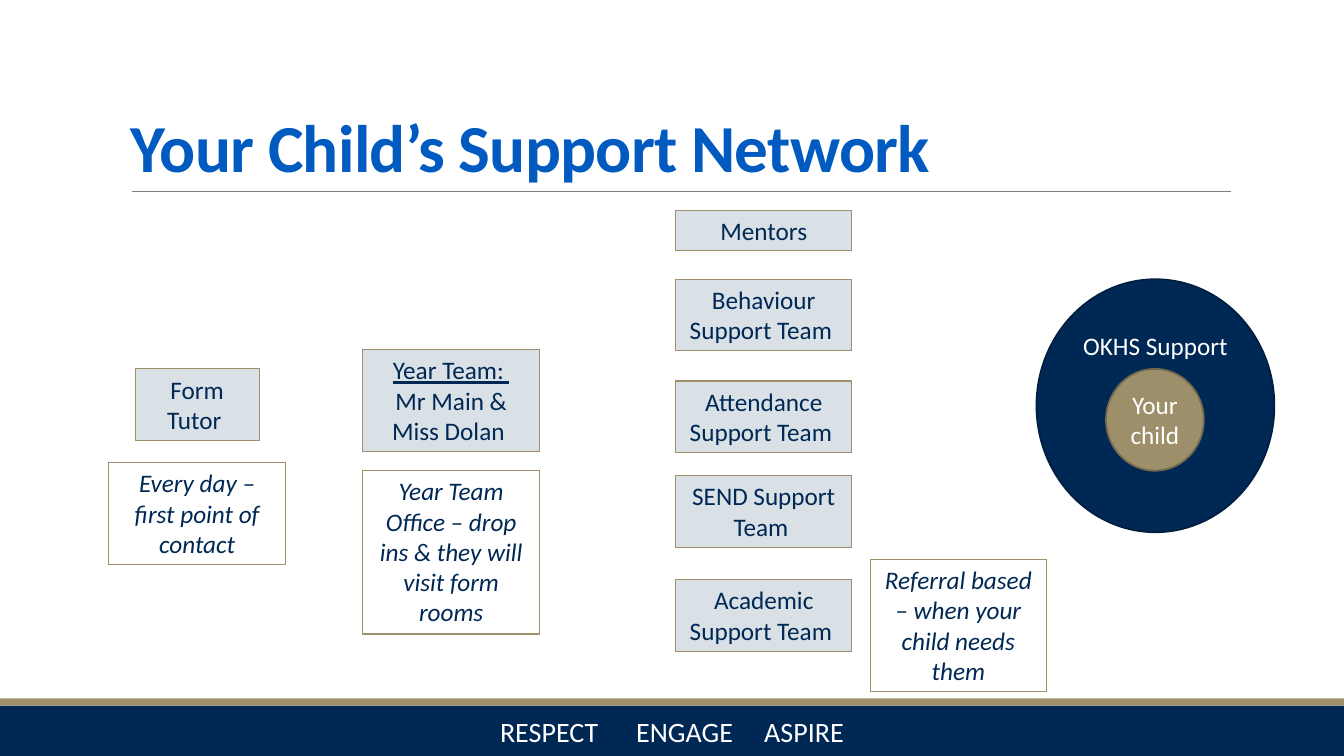
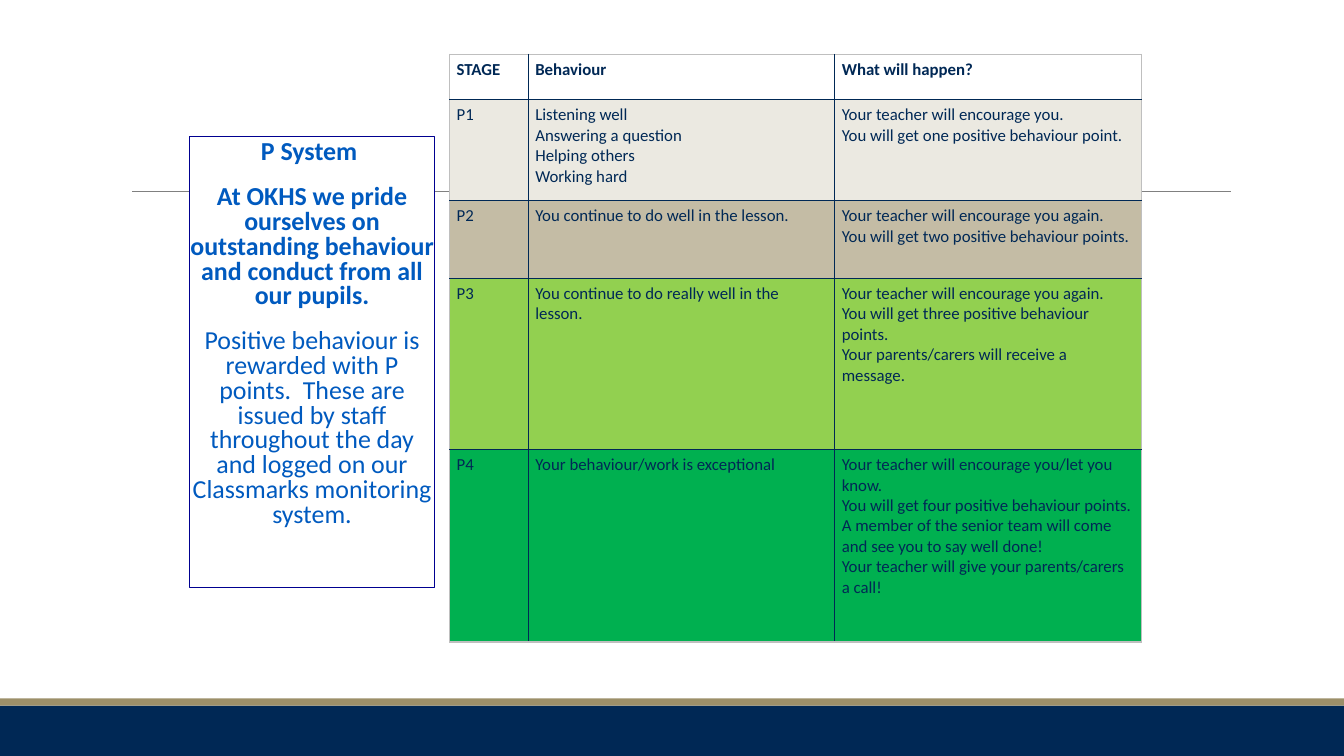
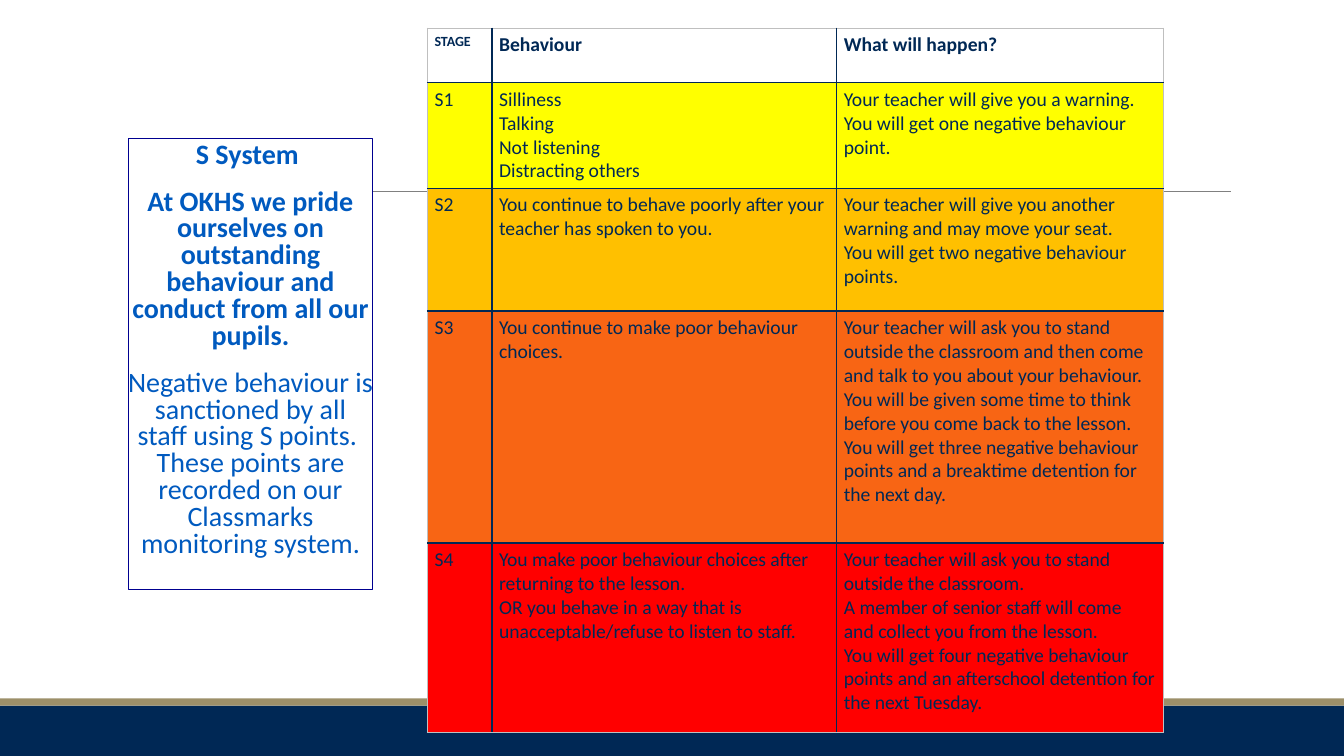
from lxml.etree import SubElement as Sub
from pptx import Presentation as Deck
from pptx.dml.color import RGBColor as Rgb
from pptx.enum.shapes import MSO_CONNECTOR as Conn, MSO_SHAPE as Kind
from pptx.enum.text import MSO_ANCHOR as Anchor, PP_ALIGN as Align
from pptx.oxml.ns import qn
from pptx.util import Inches, Pt

HUES = {
    "navy": "002855", "deep": "001E3F", "gold": "9C8F69", "bronze": "736A4E",
    "blue": "005ABF", "ink": "000090", "mist": "D9E0E6", "white": "FFFFFF",
    "rule": "808080", "edge": "BFBFBF", "cream": "EBE9E1", "sand": "C4BCA5",
    "lime": "92D050", "green": "00B050", "yellow": "FFFF00", "amber": "FFC000",
    "orange": "F86514", "red": "FF0000",
}
PRIDE = "At OKHS we pride ourselves on outstanding behaviour and conduct from all our pupils."
HEADS = ["STAGE", "Behaviour", "What will happen?"]


def hue(name):
    return Rgb.from_string(HUES[name])


class Show:
    """Holds the deck, its style and the current slide."""

    font = "Calibri"

    def __init__(self):
        self.deck = Deck()
        self.deck.slide_width = Inches(13.33)
        self.deck.slide_height = Inches(7.5)

    def page(self):
        self.slide = self.deck.slides.add_slide(self.deck.slide_layouts[6])
        self.shape((0, 7, 13.33, 0.5), "navy")
        self.shape((0, 6.93, 13.33, 0.07), "gold")
        rule = self.slide.shapes.add_connector(
            Conn.STRAIGHT, Inches(1.31), Inches(1.9), Inches(12.21), Inches(1.9))
        rule.line.color.rgb = hue("rule")
        rule.line.width = Pt(0.5)
        Sub(rule._element.spPr, qn("a:effectLst"))

    def words(self, para, text, size, color="navy", bold=False, italic=False, under=False):
        run = para.add_run()
        run.text = text
        font = run.font
        font.name, font.size = self.font, Pt(size)
        font.bold, font.italic, font.underline = bold, italic, under
        font.color.rgb = hue(color)
        return run

    def paras(self, frame, count, align=Align.CENTER):
        for _ in range(count - 1):
            frame.add_paragraph()
        for para in frame.paragraphs:
            para.alignment = align
        return frame.paragraphs

    def shape(self, area, fill=None, line=None, width=0.75, kind=Kind.RECTANGLE):
        shape = self.slide.shapes.add_shape(kind, *map(Inches, area))
        shape.shadow.inherit = False
        if fill:
            shape.fill.solid()
            shape.fill.fore_color.rgb = hue(fill)
        else:
            shape.fill.background()
        if line:
            shape.line.color.rgb = hue(line)
            shape.line.width = Pt(width)
        else:
            shape.line.fill.background()
        shape.text_frame.word_wrap = True
        shape.text_frame.vertical_anchor = Anchor.TOP
        return shape

    def label(self, area, anchor):
        frame = self.slide.shapes.add_textbox(*map(Inches, area)).text_frame
        frame.word_wrap = True
        frame.vertical_anchor = anchor
        return frame

    def title(self, text):
        para = self.label((1.2, 0.31, 11, 1.59), Anchor.BOTTOM).paragraphs[0]
        para.line_spacing = 0.85
        run = self.words(para, text, 48, "blue", bold=True)
        run.font._element.set("spc", "-50")

    def motto(self, parts, stops):
        frame = self.label((4.03, 7.06, 5.27, 0.4), Anchor.MIDDLE)
        frame.margin_left = Inches(0.93)
        para = frame.paragraphs[0]
        tabs = Sub(para._p.get_or_add_pPr(), qn("a:tabLst"))
        for stop in stops:
            Sub(tabs, qn("a:tab"), pos=str(Inches(stop)), algn="l")
        self.words(para, "\t".join(parts), 20, "white")

    def team(self, area, text, head=None):
        frame = self.shape(area, "mist", "gold").text_frame
        paras = self.paras(frame, 2 if head else 1)
        if head:
            self.words(paras[0], head, 18, under=True)
        self.words(paras[-1], text, 18)

    def note(self, area, text):
        frame = self.shape(area, None, "gold").text_frame
        self.words(self.paras(frame, 1)[0], text, 18, italic=True)

    def ring(self, area, fill, line, text, anchor, top=0.05):
        frame = self.shape(area, fill, line, 1.25, Kind.OVAL).text_frame
        frame.vertical_anchor = anchor
        frame.margin_top = Inches(top)
        self.words(self.paras(frame, 1)[0], text, 18, "white")

    def panel(self, left, top, size, head, body):
        frame = self.shape((left, top, 2.43, 4.48), "white", "ink").text_frame
        frame.margin_left = frame.margin_right = 0
        texts = [head, PRIDE, body]
        for para, text in zip(self.paras(frame, len(texts)), texts):
            para.line_spacing = 0.8
            para.space_before, para.space_after = Pt(12), Pt(2)
            self.words(para, text, size, "blue", bold=text != body)

    def border(self, cell, side, color):
        line = Sub(cell._tc.get_or_add_tcPr(), qn("a:ln" + side), w=str(Pt(1)))
        Sub(Sub(line, qn("a:solidFill")), qn("a:srgbClr"), val=HUES[color])

    def grid(self, left, top, cols, highs, rows, size, small):
        area = map(Inches, (left, top, sum(cols), sum(highs)))
        table = self.slide.shapes.add_table(len(highs), len(cols), *area).table
        table.first_row = table.horz_banding = False
        for col, wide in zip(table.columns, cols):
            col.width = Inches(wide)
        for row, high in zip(table.rows, highs):
            row.height = Inches(high)
        full = [("white", *HEADS)] + rows
        for y, (fill, *texts) in enumerate(full):
            for x, text in enumerate(texts):
                cell = table.cell(y, x)
                cell.margin_left = cell.margin_right = Inches(0.07)
                outer = {"L": x == 0, "R": x == len(cols) - 1,
                         "T": y == 0, "B": y == len(highs) - 1}
                for side, edge in outer.items():
                    self.border(cell, side, "edge" if edge else "navy")
                cell.fill.solid()
                cell.fill.fore_color.rgb = hue(fill)
                lines = text.split("\n")
                paras = self.paras(cell.text_frame, len(lines), Align.LEFT)
                for para, line in zip(paras, lines):
                    self.words(para, line, small if x == y == 0 else size, bold=y == 0)


def support(show):
    show.page()
    show.title("Your Child’s Support Network")
    show.motto(["RESPECT", "ENGAGE", "ASPIRE"], [1.35, 2.62])
    show.team((1.34, 3.66, 1.23, 0.71), "Form Tutor ")
    show.team((3.6, 3.47, 1.75, 1.01), "Mr Main & Miss Dolan ", "Year Team: ")
    teams = [
        (2.09, 0.4, "Mentors"),
        (2.77, 0.71, "Behaviour Support Team "),
        (3.78, 0.71, "Attendance Support Team "),
        (4.72, 0.71, "SEND Support Team "),
        (5.75, 0.71, "Academic Support Team "),
    ]
    for top, high, text in teams:
        show.team((6.7, top, 1.75, high), text)
    show.ring((10.28, 2.77, 2.36, 2.51), "navy", "deep", "OKHS Support ", Anchor.TOP, 0.14)
    show.ring((10.97, 3.66, 0.97, 1.01), "gold", "bronze", "Your child", Anchor.MIDDLE)
    show.note((1.08, 4.59, 1.75, 1.01), "Every day – first point of contact")
    show.note((3.6, 4.67, 1.75, 1.62),
              "Year Team Office – drop ins & they will visit form rooms")
    show.note((8.63, 5.55, 1.75, 1.31), "Referral based – when your child needs them")


def praise(show):
    show.page()
    show.panel(1.88, 1.35, 18.5, "P System ",
               "Positive behaviour is rewarded with P points.  These are issued by staff "
               "throughout the day and logged on our Classmarks monitoring system.")
    rows = [
        ("cream", "P1",
         "Listening well\nAnswering a question\nHelping others\nWorking hard",
         "Your teacher will encourage you.\nYou will get one positive behaviour point."),
        ("sand", "P2", "You continue to do well in the lesson.",
         "Your teacher will encourage you again.\n"
         "You will get two positive behaviour points."),
        ("lime", "P3", "You continue to do really well in the lesson.",
         "Your teacher will encourage you again.\n"
         "You will get three positive behaviour points.\n"
         "Your parents/carers will receive a message."),
        ("green", "P4", "Your behaviour/work is exceptional",
         "Your teacher will encourage you/let you know.\n"
         "You will get four positive behaviour points.\n"
         "A member of the senior team will come and see you to say well done!\n"
         "Your teacher will give your parents/carers a call!"),
    ]
    show.grid(4.46, 0.54, [0.78, 3.04, 3.04], [0.45, 1, 0.77, 1.7, 1.91], rows, 12, 12)


def sanction(show):
    show.page()
    show.panel(1.27, 1.37, 20, "S System ",
               "Negative behaviour is sanctioned by all staff using S points.  These points "
               "are recorded on our Classmarks monitoring system.")
    rows = [
        ("yellow", "S1", "Silliness\nTalking\nNot listening\nDistracting others",
         "Your teacher will give you a warning.\n"
         "You will get one negative behaviour point."),
        ("amber", "S2",
         "You continue to behave poorly after your teacher has spoken to you.",
         "Your teacher will give you another warning and may move your seat.\n"
         "You will get two negative behaviour points."),
        ("orange", "S3", "You continue to make poor behaviour choices.",
         "Your teacher will ask you to stand outside the classroom and then come "
         "and talk to you about your behaviour.\n"
         "You will be given some time to think before you come back to the lesson.\n"
         "You will get three negative behaviour points and a breaktime detention "
         "for the next day."),
        ("red", "S4",
         "You make poor behaviour choices after returning to the lesson.\n"
         "OR you behave in a way that is unacceptable/refuse to listen to staff.",
         "Your teacher will ask you to stand outside the classroom.\n"
         "A member of senior staff will come and collect you from the lesson.\n"
         "You will get four negative behaviour points and an afterschool detention "
         "for the next Tuesday."),
    ]
    show.grid(4.24, 0.28, [0.64, 3.42, 3.24], [0.54, 1.01, 1.22, 2.3, 1.88], rows, 14, 10)


def main():
    show = Show()
    for build in (support, praise, sanction):
        build(show)
    show.deck.save("out.pptx")


if __name__ == "__main__":
    main()
